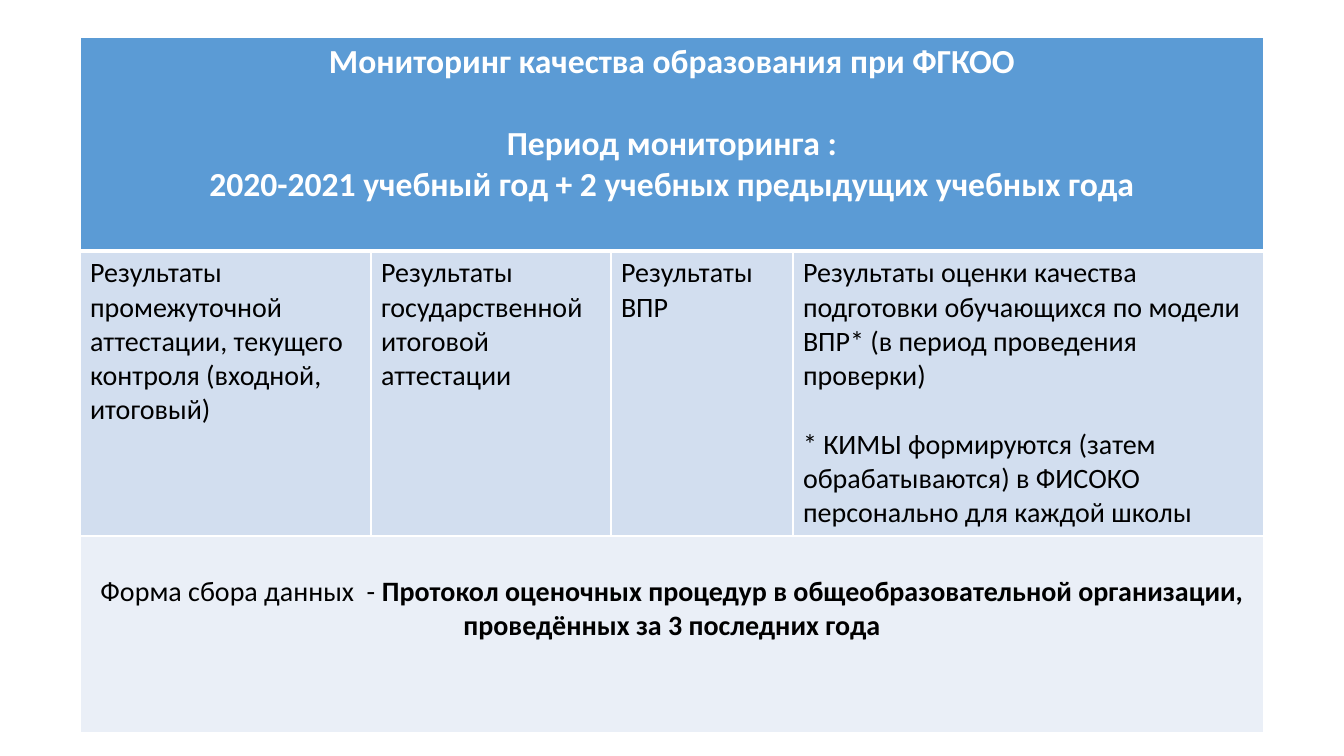
from lxml import etree
from pptx import Presentation
from pptx.dml.color import RGBColor
from pptx.enum.text import PP_ALIGN
from pptx.oxml.ns import qn
from pptx.util import Pt

LEFT, CENTER = PP_ALIGN.LEFT, PP_ALIGN.CENTER

# Content: each paragraph is a list of (text, bold) runs
HEADER = [
    [("Мониторинг качества образования при ФГКОО", True)],
    [("Период мониторинга :", True)],
    [("2020-2021 учебный год + 2 учебных предыдущих учебных года", True)],
]
RESULTS = [
    [[("Результаты промежуточной аттестации, текущего контроля (входной, итоговый)", False)]],
    [[("Результаты государственной итоговой аттестации", False)]],
    [[("Результаты ВПР", False)]],
    [[("Результаты оценки качества подготовки обучающихся по модели ВПР* "
       "(в период проведения проверки)", False)],
     [("* КИМЫ формируются (затем обрабатываются) в ФИСОКО персонально для каждой школы", False)]],
]
FORM = [[
    ("Форма сбора данных  - ", False),
    ("Протокол оценочных процедур в общеобразовательной организации, "
     "проведённых за 3 последних года", True),
]]

# Look
FONT = "Calibri"
COLORS = {"header": "5B9BD5", "results": "D2DEEF", "form": "EAEFF7",
          "white": "FFFFFF", "black": "000000"}
HEADER_PT, BODY_PT = 24, 20
LINE_HEIGHT = 1.22

# Layout in px
SLIDE_W, SLIDE_H = 1344, 756
TABLE_X, TABLE_Y = 80, 37
COL_W = [291, 240, 182, 471]
ROW_H = [214, 285, 197]
FORM_TOP = 39
EMU_PER_PX = 914400 / 100.8


def px(n):
    return round(n * EMU_PER_PX)


def rgb(name):
    return RGBColor.from_string(COLORS[name])


def set_borders(cell, bottom_pt):
    tc_pr = cell._tc.get_or_add_tcPr()
    for i, (side, width) in enumerate([("L", 1), ("R", 1), ("T", 1), ("B", bottom_pt)]):
        ln = etree.Element(qn("a:ln" + side), w=str(Pt(width)))
        fill = etree.SubElement(ln, qn("a:solidFill"))
        etree.SubElement(fill, qn("a:srgbClr"), val=COLORS["white"])
        tc_pr.insert(i, ln)


def write(cell, paragraphs, size, color, align, gap_before=None):
    """Fill a cell; the paragraph at index gap_before follows one empty line."""
    tf = cell.text_frame
    for i, runs in enumerate(paragraphs):
        p = tf.paragraphs[0] if i == 0 else tf.add_paragraph()
        p.alignment = align
        if i == gap_before:
            p.space_before = Pt(size * LINE_HEIGHT)
        for text, bold in runs:
            r = p.add_run()
            r.text = text
            r.font.name, r.font.size, r.font.bold = FONT, Pt(size), bold
            r.font.color.rgb = rgb(color)


prs = Presentation()
prs.slide_width, prs.slide_height = px(SLIDE_W), px(SLIDE_H)
s = prs.slides.add_slide(prs.slide_layouts[6])

# Table grid
table = s.shapes.add_table(len(ROW_H), len(COL_W), px(TABLE_X), px(TABLE_Y),
                           px(sum(COL_W)), px(sum(ROW_H))).table
for col, w in zip(table.columns, COL_W):
    col.width = px(w)
for row, h, fill in zip(table.rows, ROW_H, ["header", "results", "form"]):
    row.height = px(h)
    for cell in row.cells:
        cell.fill.solid()
        cell.fill.fore_color.rgb = rgb(fill)
        set_borders(cell, 3 if fill == "header" else 1)

# Full-width rows
last_col = len(COL_W) - 1
for row in (0, 2):
    table.cell(row, 0).merge(table.cell(row, last_col))

# Text
write(table.cell(0, 0), HEADER, HEADER_PT, "white", CENTER, gap_before=1)
for col, paragraphs in enumerate(RESULTS):
    write(table.cell(1, col), paragraphs, BODY_PT, "black", LEFT, gap_before=1)
form_cell = table.cell(2, 0)
form_cell.margin_top = px(FORM_TOP)
write(form_cell, FORM, BODY_PT, "black", CENTER)

prs.save("out.pptx")
